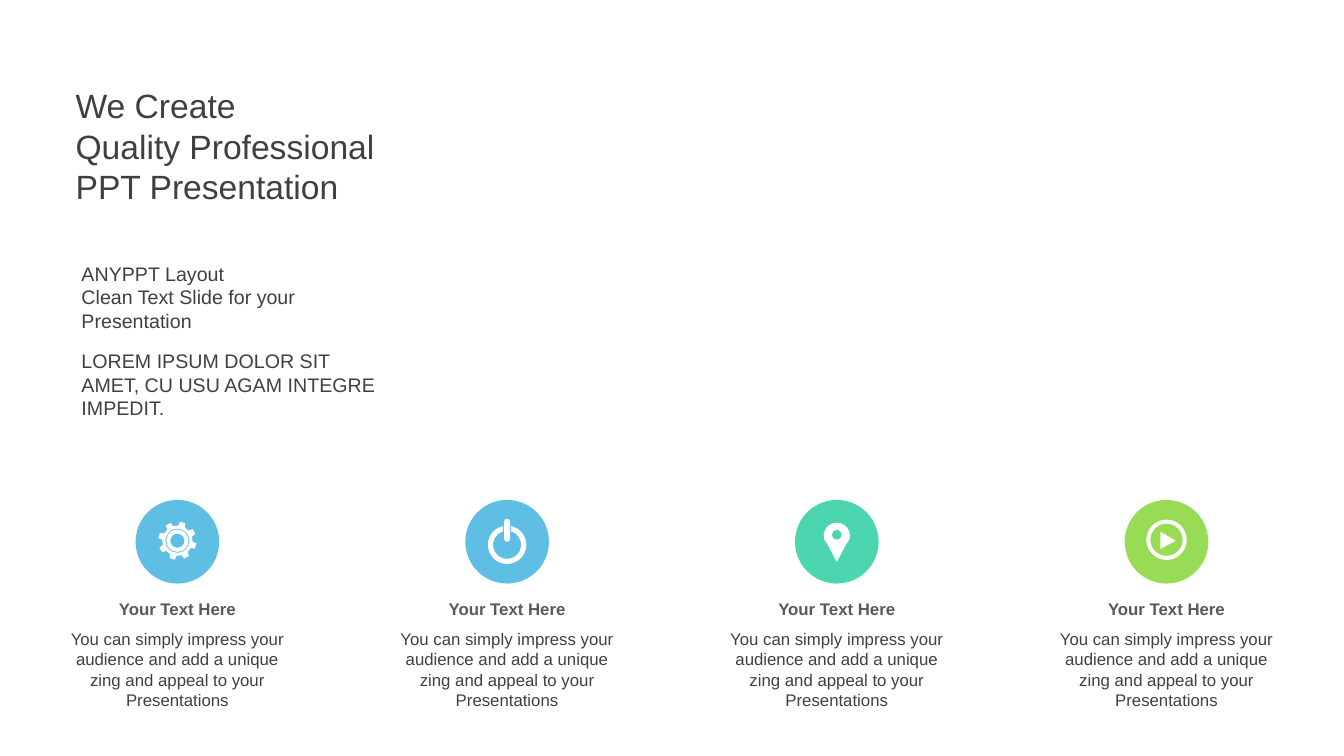
from math import cos, radians, sin, tan

from pptx import Presentation
from pptx.dml.color import RGBColor
from pptx.enum import shapes, text
from pptx.oxml.ns import qn
from pptx.util import Inches, Pt

FONT = "Arial"
DARK, GREY, WHITE = "404040", "595959", "FFFFFF"
COLUMN_LEFT, COLUMN_WIDTH, COLUMN_STEP = 0.56, 2.4, 3.27
CIRCLE_TOP, CIRCLE_SIZE = 4.96, 0.83
HEADING = "Your Text Here"
BODY = ("You can simply impress your audience and add a unique "
        "zing and appeal to your Presentations")


def color(value):
    return RGBColor.from_string(value)


def apply(target, values):
    for name, value in values.items():
        setattr(target, name, value)


def paint(shape, fill):
    shape.shadow.inherit = False
    shape.fill.solid()
    shape.fill.fore_color.rgb = color(fill)
    shape.line.fill.background()


def add_text(page, place, lines, size, ink=DARK, bold=False, frame=None, layout=None):
    box = page.shapes.add_textbox(*map(Inches, place))
    box.text_frame.word_wrap = True
    apply(box.text_frame, frame or {})
    for index, line in enumerate(lines):
        para = box.text_frame.paragraphs[0] if index == 0 else box.text_frame.add_paragraph()
        apply(para, layout or {})
        span = para.add_run()
        span.text = line
        apply(span.font, {"name": FONT, "size": Pt(size), "bold": bold})
        span.font.color.rgb = color(ink)


def corners(*points):
    return [(point,) for point in points]


def on_circle(x, y, radius, angle, tangent=0):
    return (x + radius * (cos(angle) - tangent * sin(angle)),
            y + radius * (sin(angle) + tangent * cos(angle)))


def arc(x, y, radius, start=0, end=360, steps=4):
    sweep = radians(end - start) / steps
    tangent = 4 / 3 * tan(sweep / 4)
    angles = [radians(start) + sweep * step for step in range(steps + 1)]
    segments = corners(on_circle(x, y, radius, angles[0]))
    for before, after in zip(angles, angles[1:]):
        segments.append((on_circle(x, y, radius, before, tangent),
                         on_circle(x, y, radius, after, -tangent),
                         on_circle(x, y, radius, after)))
    return segments


def gear():
    outline = []
    for tooth in range(8):
        for turn, radius in ((-8, 0.19), (8, 0.19), (13, 0.15), (32, 0.15)):
            outline += corners(on_circle(0, -0.01, radius, radians(45 * tooth - 74 + turn)))
    return [outline] + [arc(0, -0.01, radius) for radius in (0.12, 0.11, 0.07)]


def power():
    ring = arc(0, 0.03, 0.19, -78, 258) + arc(0, 0.03, 0.14, 253, -73)
    bar = arc(0, -0.2, 0.03, 180, 360, 2) + arc(0, -0.03, 0.03, 0, 180, 2)
    return [ring, bar]


def pin():
    tail = corners((0.09, 0.03), (0, 0.2), (-0.09, 0.03))
    return [arc(0, -0.06, 0.13, 165, 375, 3) + tail, arc(0, -0.07, 0.05)]


def play():
    triangle = corners((-0.06, -0.1), (0.09, -0.01), (-0.06, 0.07))
    return [triangle, arc(0, -0.02, 0.16), arc(0, -0.02, 0.2)]


def bend(shape, contours):
    nodes = iter(list(shape.element.iter(qn("a:lnTo"))))
    for contour in contours:
        for segment in contour[1:]:
            first, *others = [next(nodes) for _ in segment]
            if others:
                first.tag = qn("a:cubicBezTo")
            for other in others:
                first.append(other[0])
                other.getparent().remove(other)


def add_icon(page, x, y, contours):
    builder = None
    for contour in contours:
        points = [(Inches(x + dx), Inches(y + dy)) for segment in contour for dx, dy in segment]
        if builder is None:
            builder = page.shapes.build_freeform(*points[0])
        else:
            builder.move_to(*points[0])
        builder.add_line_segments(points[1:], close=True)
    icon = builder.convert_to_shape()
    bend(icon, contours)
    paint(icon, WHITE)


def add_column(page, left, fill, contours):
    centered = {"alignment": text.PP_ALIGN.CENTER, "space_before": Pt(2.4)}
    add_text(page, (left, 5.89, COLUMN_WIDTH, 0.3), [HEADING], 12, GREY, True, layout=centered)
    add_text(page, (left, 6.19, COLUMN_WIDTH, 0.91), [BODY], 12, layout=centered)
    center = left + COLUMN_WIDTH / 2
    place = (center - CIRCLE_SIZE / 2, CIRCLE_TOP, CIRCLE_SIZE, CIRCLE_SIZE)
    paint(page.shapes.add_shape(shapes.MSO_SHAPE.OVAL, *map(Inches, place)), fill)
    add_icon(page, center, CIRCLE_TOP + CIRCLE_SIZE / 2, contours)


def main():
    deck = Presentation()
    apply(deck, {"slide_width": Inches(13.33), "slide_height": Inches(7.5)})
    page = deck.slides.add_slide(deck.slide_layouts[6])

    columns = [("5EBEE4", gear()), ("5EBEE4", power()), ("4CD6B0", pin()), ("98DC56", play())]
    for index, (fill, contours) in enumerate(columns):
        add_column(page, COLUMN_LEFT + index * COLUMN_STEP, fill, contours)

    middle = {"vertical_anchor": text.MSO_ANCHOR.MIDDLE,
              "auto_size": text.MSO_AUTO_SIZE.SHAPE_TO_FIT_TEXT}
    tight = {"margin_left": Inches(0.04), "margin_right": Inches(0.04),
             "margin_top": 0, "margin_bottom": 0}
    add_text(page, (0.71, 2.54, 3.12, 0.81),
             ["ANYPPT Layout", "Clean Text Slide for your Presentation"], 14, frame=middle)
    add_text(page, (0.71, 0.84, 3.12, 1.21),
             ["We Create", "Quality Professional", "PPT Presentation"], 24,
             frame={**middle, **tight})
    add_text(page, (0.71, 3.41, 3.12, 0.81),
             ["LOREM IPSUM DOLOR SIT AMET, CU USU AGAM INTEGRE IMPEDIT."], 14, frame=middle)

    deck.save("out.pptx")


if __name__ == "__main__":
    main()
